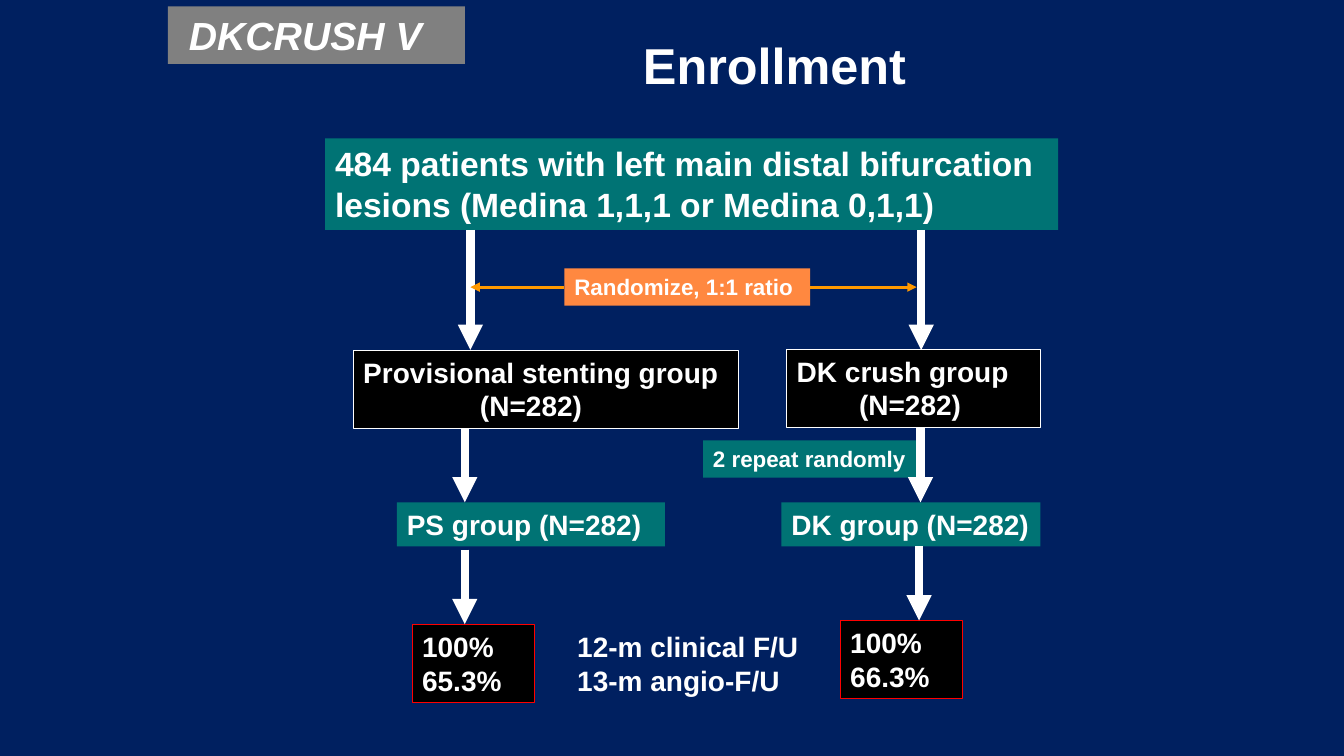
from lxml.etree import SubElement
from pptx import Presentation
from pptx.dml.color import RGBColor
from pptx.enum.shapes import MSO_CONNECTOR, MSO_SHAPE
from pptx.enum.text import MSO_ANCHOR, PP_ALIGN
from pptx.oxml.ns import qn
from pptx.util import Pt

COLORS = {
    "navy": "002060",
    "white": "FFFFFF",
    "black": "000000",
    "gray": "808080",
    "teal": "007374",
    "orange": "FF8840",
    "amber": "FF9900",
    "red": "FF0000",
}


def color(name):
    """Return the named colour."""
    return RGBColor.from_string(COLORS[name])


def write_text(shape, text, size, align=PP_ALIGN.LEFT, italic=False):
    """Fill a shape with bold white Arial text."""
    frame = shape.text_frame
    frame.word_wrap = True
    frame.margin_right = 0
    frame.text = text
    for paragraph in frame.paragraphs:
        paragraph.alignment = align
        for run in paragraph.runs:
            run.font.name = "Arial"
            run.font.size = Pt(size)
            run.font.bold = True
            run.font.italic = italic
            run.font.color.rgb = color("white")
    return frame


def add_label(slide, bounds, text, size, **style):
    """Add text without a box around it."""
    label = slide.shapes.add_textbox(*map(Pt, bounds))
    return write_text(label, text, size, **style)


def add_box(slide, bounds, text, size, fill, outline=None, indent=0, italic=False):
    """Add a filled box, with its last line indented if asked."""
    box = slide.shapes.add_shape(MSO_SHAPE.RECTANGLE, *map(Pt, bounds))
    box.shadow.inherit = False
    box.fill.solid()
    box.fill.fore_color.rgb = color(fill)
    if outline:
        box.line.color.rgb = color(outline)
        box.line.width = Pt(0.75)
    else:
        box.line.fill.background()
    frame = write_text(box, text, size, italic=italic)
    frame.vertical_anchor = MSO_ANCHOR.TOP
    if indent:
        properties = frame.paragraphs[-1]._p.get_or_add_pPr()
        properties.set("marL", str(Pt(indent)))
        properties.set("indent", "0")
    return box


def add_arrow(slide, start, end, line_color, width):
    """Add a straight arrow with a triangular head."""
    arrow = slide.shapes.add_connector(MSO_CONNECTOR.STRAIGHT, *map(Pt, start + end))
    arrow.line.color.rgb = color(line_color)
    arrow.line.width = Pt(width)
    SubElement(arrow.line._get_or_add_ln(), qn("a:tailEnd"), type="triangle")
    SubElement(arrow._element.spPr, qn("a:effectLst"))
    return arrow


def main():
    """Build the enrollment flow chart."""
    presentation = Presentation()
    presentation.slide_width, presentation.slide_height = Pt(960), Pt(540)
    slide = presentation.slides.add_slide(presentation.slide_layouts[6])
    slide.background.fill.solid()
    slide.background.fill.fore_color.rgb = color("navy")

    title = add_label(slide, (320.4, 15.8, 465.8, 59.8), "Enrollment", 36,
                      align=PP_ALIGN.CENTER)
    title.vertical_anchor = MSO_ANCHOR.MIDDLE
    title.margin_left = title.margin_right = Pt(3.6)
    trial = add_box(slide, (120, 4.5, 212.2, 41.2), "DKCRUSH V", 28, "gray", italic=True)
    trial.text_frame.margin_left = Pt(15)

    add_box(slide, (232.2, 98.8, 523.6, 65.4),
            "484 patients with left main distal bifurcation lesions "
            "(Medina 1,1,1 or Medina 0,1,1)", 24, "teal")
    groups = [
        ((252.4, 250.2, 275.2, 55.8), "Provisional stenting group\n(N=282)", 83.4),
        ((562, 249.4, 181.4, 55.8), "DK crush group\n(N=282)", 44.5),
    ]
    for bounds, text, indent in groups:
        add_box(slide, bounds, text, 20, "black", "white", indent)
    add_box(slide, (283.5, 358.8, 191.5, 31.5), "PS group (N=282)", 20, "teal")
    add_box(slide, (558.2, 358.8, 185, 31.5), "DK group (N=282)", 20, "teal")
    randomize = add_box(slide, (403.2, 191.8, 175.5, 26.6), "Randomize, 1:1 ratio",
                        16, "orange")
    add_box(slide, (502.2, 314.6, 152.8, 26.6), "2 repeat randomly", 16, "teal")
    add_box(slide, (294.4, 446.2, 87.4, 55.8), "100%\n65.3%", 20, "black", "red")
    add_box(slide, (600.2, 443.2, 87.4, 55.8), "100%\n66.3%", 20, "black", "red")

    steps = [
        (336, 164.2, 250),
        (658, 164.2, 250),
        (332, 306, 358.8),
        (657.5, 306, 358.8),
        (332, 392.6, 445.8),
        (656.5, 390.2, 443.2),
    ]
    for x, top, bottom in steps:
        add_arrow(slide, (x, top), (x, bottom), "white", 6)

    add_label(slide, (405.2, 446.2, 177.8, 55.8), "12-m clinical F/U\n13-m angio-F/U", 20)

    for start_x, end_x, side in [(578.7, 654.8, 3), (403.2, 336, 1)]:
        arrow = add_arrow(slide, (start_x, 205.1), (end_x, 205.1), "amber", 2.25)
        arrow.begin_connect(randomize, side)

    presentation.save("out.pptx")


if __name__ == "__main__":
    main()
